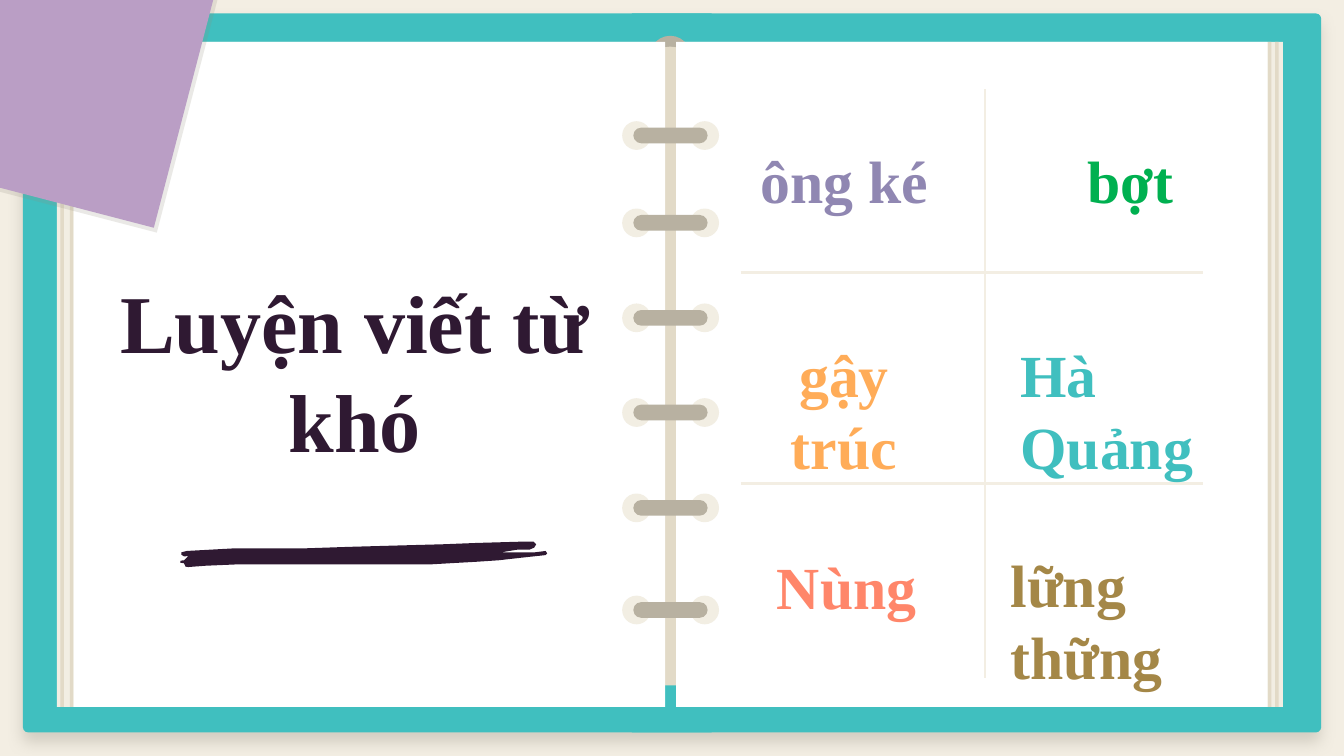
from dataclasses import dataclass

from lxml import etree
from pptx import Presentation
from pptx.dml.color import RGBColor
from pptx.enum import shapes, text
from pptx.oxml import ns
from pptx.util import Pt


@dataclass(frozen=True)
class Theme:
    font: str = "Times New Roman"
    title_size: float = 44
    word_size: float = 32
    inset: float = 7.2
    ink: str = "2F1932"
    cover: str = "40BFBF"
    desk: str = "F3EEE3"
    cream: str = "F2EEE3"
    edge: str = "E2DAC7"
    ring: str = "B8B1A1"
    page: str = "FFFFFF"
    shade: str = "918C7F"
    note: str = "BA9EC5"


THEME = Theme()
PAGE_TOP, PAGE_HEIGHT = 22.5, 356.25
RING_CENTRES = (72.6, 119.4, 170.3, 221, 272.1, 326.8)
LEFT, CENTRE = text.PP_ALIGN.LEFT, text.PP_ALIGN.CENTER

# word, colour, alignment, (left, top, width, height)
WORDS = (
    ("ông ké", "9087B2", LEFT, (400.3, 69.8, 106.6, 48.2)),
    ("bợt", "00B050", CENTRE, (552.2, 69.8, 106.6, 48.2)),
    ("gậy trúc", "FFAC58", CENTRE, (388.8, 173.8, 126.7, 48.2)),
    ("Hà Quảng", THEME.cover, LEFT, (539.6, 173.8, 127.4, 48.2)),
    ("Nùng", "FF866A", CENTRE, (400.3, 287.3, 106.6, 48.2)),
    ("lững thững", "A48747", LEFT, (534.3, 286.4, 138.2, 48.2)),
)

BRUSH_STROKE = (
    (279.4, 290.2), (255.6, 290.9), (237.6, 291.6), (211.7, 292.3),
    (187.2, 293), (162.7, 293.8), (125.3, 293.8), (100, 295.2),
    (97.2, 295.9), (97.2, 297.2), (98.6, 298.1), (110.2, 297.4),
    (100.8, 298.1), (98.6, 300.2), (96.8, 300.4), (96.5, 301.4),
    (98.6, 301.8), (99.4, 303.6), (100.8, 303.8), (110.2, 303.1),
    (126.7, 302.4), (230.4, 302.4), (242.6, 301.7), (254.9, 301),
    (267.1, 300.2), (279.4, 298.8), (292.3, 297.4), (293.2, 296.5),
    (292.3, 295.2), (286.6, 295.9), (268.6, 295.9), (277.2, 294.5),
    (283.7, 294.5), (286.2, 293.4), (287.3, 291.6), (285.8, 290.2),
)
NOTE_CORNERS = ((-12.2, -39.6), (-46.1, 88.6), (82.4, 122), (115.9, -6.5))


def rgb(colour):
    return RGBColor.from_string(colour)


def paint(shape, colour):
    shape.shadow.inherit = False
    shape.fill.solid()
    shape.fill.fore_color.rgb = rgb(colour)
    shape.line.fill.background()
    return shape


def add_block(slide, colour, box, kind=shapes.MSO_SHAPE.RECTANGLE, rounding=None):
    block = slide.shapes.add_shape(kind, *map(Pt, box))
    if rounding is not None:
        block.adjustments[0] = rounding
    return paint(block, colour)


def add_outline(slide, colour, corners):
    points = [(Pt(x), Pt(y)) for x, y in corners]
    builder = slide.shapes.build_freeform(*points[0])
    builder.add_line_segments(points[1:], close=True)
    return paint(builder.convert_to_shape(), colour)


def add_rule(slide, start, end):
    rule = slide.shapes.add_connector(
        shapes.MSO_CONNECTOR.STRAIGHT, *map(Pt, start + end))
    rule.line.color.rgb = rgb(THEME.desk)
    rule.line.width = Pt(1.5)
    etree.SubElement(rule._element.spPr, ns.qn("a:effectLst"))


def set_alpha(colour_element, percent):
    alpha = etree.SubElement(colour_element, ns.qn("a:alpha"))
    alpha.set("val", str(percent * 1000))


def drop_shadow(shape):
    """Cast a soft shadow straight down."""
    effects = shape._element.spPr.find(ns.qn("a:effectLst"))
    shadow = etree.SubElement(
        effects, ns.qn("a:outerShdw"), blurRad=str(Pt(7.9)), dist=str(Pt(5.2)),
        dir="5400000", algn="bl", rotWithShape="0")
    colour = etree.SubElement(shadow, ns.qn("a:srgbClr"), val=THEME.shade)
    set_alpha(colour, 32)


def write(shape, words, colour, size, align, anchor):
    frame = shape.text_frame
    frame.text = words
    paragraph = frame.paragraphs[0]
    paragraph.alignment = align
    inset = Pt(THEME.inset)
    frame_format = dict(
        word_wrap=True, auto_size=text.MSO_AUTO_SIZE.NONE,
        vertical_anchor=anchor, margin_left=inset, margin_right=inset,
        margin_top=inset, margin_bottom=inset)
    font = paragraph.runs[0].font
    font_format = dict(name=THEME.font, size=Pt(size), bold=True)
    for target, values in ((frame, frame_format), (font, font_format)):
        for key, value in values.items():
            setattr(target, key, value)
    font.color.rgb = rgb(colour)


def add_notebook(slide):
    oval = shapes.MSO_SHAPE.OVAL
    rounded = shapes.MSO_SHAPE.ROUNDED_RECTANGLE
    cover = add_block(slide, THEME.cover, (12.3, 7.2, 695.5, 385.2), rounded, 0.0075)
    drop_shadow(cover)
    add_block(slide, THEME.cover, (338.5, 7.2, 42.8, 385.2))

    add_block(slide, THEME.cream, (30.5, PAGE_TOP, 321.6, PAGE_HEIGHT))
    add_block(slide, THEME.edge, (354.2, 37.4, 9.4, 329.8))
    add_block(slide, THEME.ring, (348.1, 19.2, 22, 22), oval)
    add_block(slide, THEME.edge, (348.1, 25, 22, 19.4), oval)
    add_block(slide, THEME.cream, (366.5, PAGE_TOP, 320.8, PAGE_HEIGHT))
    for left in (362.2, 39.4):
        add_block(slide, THEME.page, (left, PAGE_TOP, 316.9, PAGE_HEIGHT))
    for left in (32.4, 37.4, 683.1, 679.2):
        add_block(slide, THEME.edge, (left, PAGE_TOP, 1.9, PAGE_HEIGHT))

    for centre in RING_CENTRES:
        for left in (333.3, 369.8):
            add_block(slide, THEME.cream, (left, centre - 7.7, 15.4, 15.4), oval)
        add_block(slide, THEME.ring, (339.3, centre - 4.2, 39.8, 8.4), rounded, 0.5)


def add_title(slide):
    """Fill the title and bring it in front of the notebook pages."""
    title = slide.shapes.title
    title.left, title.top, title.width, title.height = map(
        Pt, (36.7, 137.5, 306.7, 121.7))
    write(title, "Luyện viết từ khó", THEME.ink, THEME.title_size, CENTRE,
          text.MSO_ANCHOR.MIDDLE)
    title._element.getparent().append(title._element)


def add_word_grid(slide):
    for y in (146, 259):
        add_rule(slide, (396.9, y), (644.4, y))
    add_rule(slide, (527.7, 47.8), (527.7, 363))
    for word, colour, align, box in WORDS:
        write(slide.shapes.add_textbox(*map(Pt, box)), word, colour,
              THEME.word_size, align, text.MSO_ANCHOR.TOP)


def add_sticky_note(slide):
    shade = add_outline(slide, THEME.shade, [(x + 1.6, y + 2.6) for x, y in NOTE_CORNERS])
    set_alpha(shade._element.spPr.find(".//" + ns.qn("a:srgbClr")), 19)
    add_outline(slide, THEME.note, NOTE_CORNERS)


def main():
    deck = Presentation()
    deck.slide_width, deck.slide_height = Pt(720), Pt(405)
    slide = deck.slides.add_slide(deck.slide_layouts[5])
    slide.background.fill.solid()
    slide.background.fill.fore_color.rgb = rgb(THEME.desk)
    add_notebook(slide)
    add_outline(slide, THEME.ink, BRUSH_STROKE)
    add_word_grid(slide)
    add_sticky_note(slide)
    add_title(slide)
    deck.save("out.pptx")


if __name__ == "__main__":
    main()
